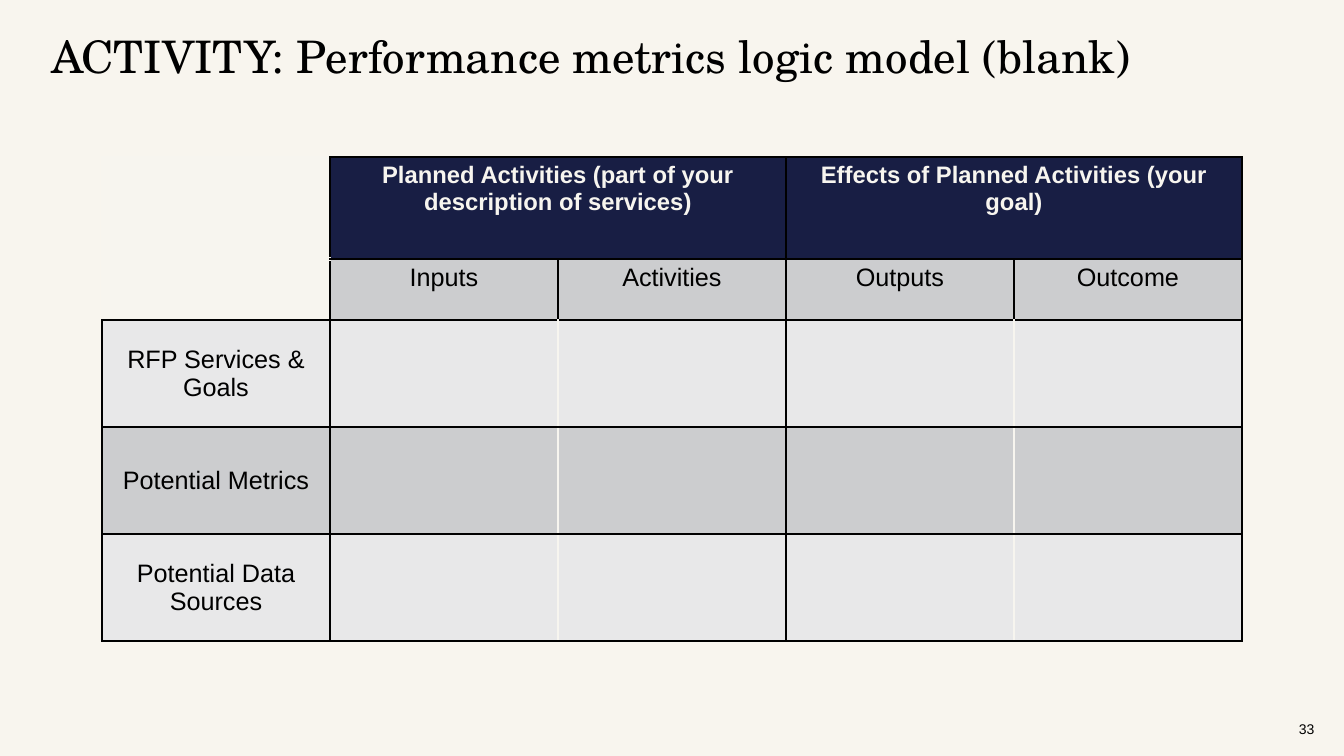
"""Build the blank performance metrics logic model slide."""
from dataclasses import dataclass

from lxml.etree import SubElement
from pptx import Presentation
from pptx.dml.color import RGBColor as RGB
from pptx.enum.text import MSO_ANCHOR as ANCHOR, MSO_AUTO_SIZE as AUTO, PP_ALIGN as ALIGN
from pptx.oxml.ns import qn
from pptx.util import Emu, Pt

TITLE = "ACTIVITY: Performance metrics logic model (blank)"
PAGE = "33"
GROUPS = ["Planned Activities (part of your description of services)",
          "Effects of Planned Activities (your goal)"]
STAGES = ["Inputs", "Activities", "Outputs", "Outcome"]
TOPICS = ["RFP Services & Goals", "Potential Metrics", "Potential Data Sources"]

SLIDE = (1344, 756)
TITLE_BOX = (41, 29, 1210, 59)
PAGE_BOX = (1289, 709, 50, 40)
TABLE_AT = (102, 157)
COL_W = 228
ROW_H = [102, 61] + [107] * len(TOPICS)


@dataclass(frozen=True)
class Theme:
    paper: str = "F8F5EE"
    pale: str = "F7F5EF"
    ink: str = "000000"
    navy: str = "181E44"
    grey: str = "CCCDCF"
    light_grey: str = "E8E8E9"
    serif: str = "TeX Gyre Schola"
    sans: str = "Arial"
    title: int = 32
    group: int = 17
    label: int = 18
    page: int = 10


T = Theme()


def px(n):
    return Emu(round(n * 914400 / 100.8))


def write(tf, text, size, font=T.sans, color=T.ink, bold=False, align=ALIGN.LEFT):
    tf.word_wrap = True
    p = tf.paragraphs[0]
    p.alignment = align
    r = p.add_run()
    r.text = text
    r.font.size, r.font.name, r.font.bold = Pt(size), font, bold
    r.font.color.rgb = RGB.from_string(color)


def write_cell(cell, text, size, anchor=ANCHOR.TOP, **look):
    cell.vertical_anchor = anchor
    write(cell.text_frame, text, size, align=ALIGN.CENTER, **look)


def style_cell(cell, fill, pale_edges="", bottom=1):
    cell.fill.solid()
    cell.fill.fore_color.rgb = RGB.from_string(fill)
    tc_pr = cell._tc.get_or_add_tcPr()
    for i, edge in enumerate("LRTB"):
        width = bottom if edge == "B" else 1
        ln = SubElement(tc_pr, qn(f"a:ln{edge}"), w=str(int(Pt(width))))
        color = T.pale if edge in pale_edges else T.ink
        SubElement(SubElement(ln, qn("a:solidFill")), qn("a:srgbClr"), val=color)
        tc_pr.insert(i, ln)


def add_model(slide):
    rows, cols = len(ROW_H), len(STAGES) + 1
    box = (*TABLE_AT, COL_W * cols, sum(ROW_H))
    table = slide.shapes.add_table(rows, cols, *map(px, box)).table
    table.first_row = table.horz_banding = False
    for col in table.columns:
        col.width = px(COL_W)
    for row, height in zip(table.rows, ROW_H):
        row.height = px(height)

    style_cell(table.cell(0, 0), T.pale, "LTB", bottom=3)
    style_cell(table.cell(1, 0), T.pale, "LT")
    for c, stage in enumerate(STAGES, 1):
        style_cell(table.cell(0, c), T.navy)
        style_cell(table.cell(1, c), T.grey)
        write_cell(table.cell(1, c), stage, T.label)
    for g, group in enumerate(GROUPS):
        cell = table.cell(0, 1 + 2 * g)
        cell.merge(table.cell(0, 2 + 2 * g))
        write_cell(cell, group, T.group, color=T.pale, bold=True)
    for i, topic in enumerate(TOPICS):
        fill = T.grey if i % 2 else T.light_grey
        style_cell(table.cell(i + 2, 0), fill)
        write_cell(table.cell(i + 2, 0), topic, T.label, anchor=ANCHOR.MIDDLE)
        for c in range(1, cols):
            style_cell(table.cell(i + 2, c), fill, "R" if c % 2 else "L")


def main():
    prs = Presentation()
    prs.slide_width, prs.slide_height = map(px, SLIDE)
    slide = prs.slides.add_slide(prs.slide_layouts[5])
    slide.background.fill.solid()
    slide.background.fill.fore_color.rgb = RGB.from_string(T.paper)

    sp = slide.shapes.title
    sp.left, sp.top, sp.width, sp.height = map(px, TITLE_BOX)
    tf = sp.text_frame
    tf.auto_size = AUTO.NONE
    tf.vertical_anchor = ANCHOR.TOP
    tf.margin_top, tf.margin_bottom = 0, px(5)
    write(tf, TITLE, T.title, font=T.serif)

    add_model(slide)
    tf = slide.shapes.add_textbox(*map(px, PAGE_BOX)).text_frame
    tf.vertical_anchor = ANCHOR.MIDDLE
    write(tf, PAGE, T.page)
    prs.save("out.pptx")


if __name__ == "__main__":
    main()
